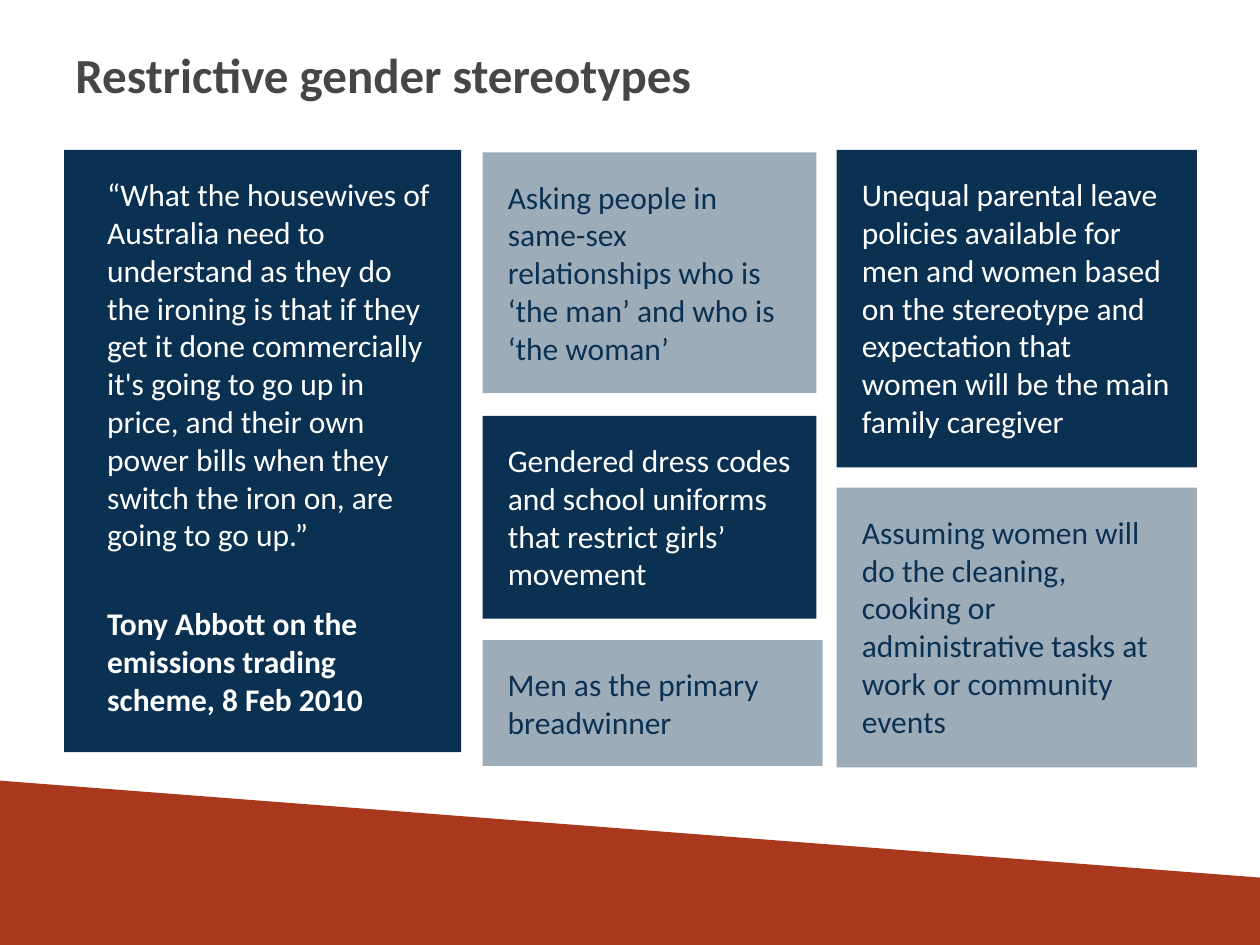
from lxml.etree import SubElement
from pptx import Presentation
from pptx.dml.color import RGBColor
from pptx.enum.shapes import MSO_SHAPE
from pptx.enum.text import MSO_ANCHOR, PP_ALIGN
from pptx.oxml.ns import qn
from pptx.util import Inches, Pt

COLORS = {"navy": "0B3152", "white": "FFFFFF", "rust": "AA381D", "title": "454745"}


def add_block(left, top, width, height, color):
    block = page.shapes.add_shape(MSO_SHAPE.RECTANGLE, Inches(left), Inches(top),
                                  Inches(width), Inches(height))
    block.shadow.inherit = False
    block.fill.solid()
    block.fill.fore_color.rgb = RGBColor.from_string(COLORS[color])
    block.line.fill.background()
    return block


def add_text(para, text, size, color, bold=False):
    """Add runs to a paragraph, with a line break at each newline."""
    para.alignment = PP_ALIGN.LEFT
    for index, line in enumerate(text.split("\n")):
        if index:
            para.add_line_break()
        span = para.add_run()
        span.text = line
        span.font.name = "Calibri"
        span.font.size = Pt(size)
        span.font.bold = bold
        span.font.color.rgb = RGBColor.from_string(COLORS[color])


deck = Presentation()
deck.slide_width = Inches(10)
deck.slide_height = Inches(7.5)
page = deck.slides.add_slide(deck.slide_layouts[6])

footer_band = add_block(-0.27, 6.58, 10.47, 1.33, "rust")
footer_band.rotation = 4.4

title = page.shapes.add_textbox(Inches(0.5), Inches(0.3), Inches(9), Inches(0.89))
title.text_frame.word_wrap = True
add_text(title.text_frame.paragraphs[0], "Restrictive gender stereotypes", 28, "title", True)

QUOTE = ("“What the housewives of Australia need to understand as they do the ironing "
         "is that if they get it done commercially it's going to go up in price, and "
         "their own power bills when they switch the iron on, are going to go up.”")
SPEAKER = "Tony Abbott on the emissions trading scheme, 8 Feb 2010"

# left, top, width, height, pale fill, paragraphs
cards = [
    (0.51, 1.19, 3.15, 4.78, False, [QUOTE, SPEAKER]),
    (3.83, 1.21, 2.65, 1.91, True,
     ["Asking people in \nsame-sex relationships who is ‘the man’ and who is ‘the woman’"]),
    (3.83, 3.3, 2.65, 1.61, False,
     ["Gendered dress codes and school uniforms that restrict girls’ movement"]),
    (3.83, 5.08, 2.7, 1, True, ["Men as the primary breadwinner"]),
    (6.64, 1.19, 2.86, 2.52, False,
     ["Unequal parental leave policies available for men and women based on the "
      "stereotype and expectation that women will be the main family caregiver"]),
    (6.64, 3.87, 2.86, 2.22, True,
     ["Assuming women will do the cleaning, cooking or administrative tasks at work "
      "or community events"]),
]

for left, top, width, height, pale, texts in cards:
    card = add_block(left, top, width, height, "navy")
    if pale:
        fill_color = card.fill._xPr.find(qn("a:solidFill"))[0]
        SubElement(fill_color, qn("a:alpha"), val="40000")
    frame = card.text_frame
    frame.word_wrap = True
    frame.vertical_anchor = MSO_ANCHOR.TOP
    frame.margin_left = frame.margin_right = Inches(0.2)
    frame.margin_top = frame.margin_bottom = Inches(0.2)
    for index, text in enumerate(texts):
        para = frame.add_paragraph() if index else frame.paragraphs[0]
        if len(texts) > 1:
            para._p.get_or_add_pPr().set("marL", str(Inches(0.14)))
        if index:
            para.space_before = Pt(29)
        add_text(para, text, 18, "navy" if pale else "white", bold=index > 0)

deck.save("out.pptx")
